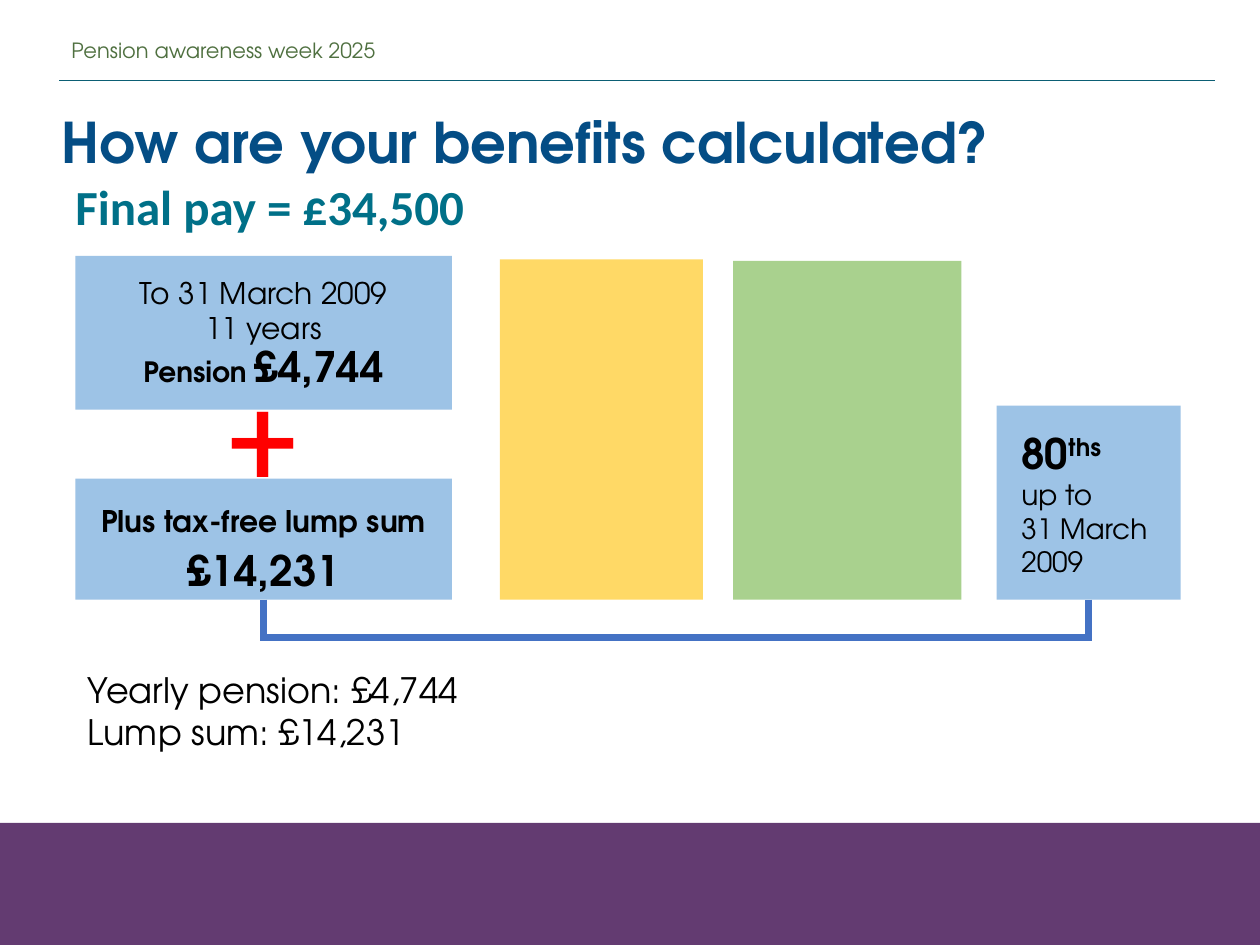
from lxml import etree
from pptx import Presentation
from pptx.dml.color import RGBColor
from pptx.enum.shapes import MSO_CONNECTOR, MSO_SHAPE
from pptx.enum.text import MSO_ANCHOR, PP_ALIGN
from pptx.oxml.ns import qn
from pptx.util import Cm, Pt

LINE, RECT = MSO_CONNECTOR.STRAIGHT, MSO_SHAPE.RECTANGLE
TOP, MID = MSO_ANCHOR.TOP, MSO_ANCHOR.MIDDLE
LEFT, CENTER = PP_ALIGN.LEFT, PP_ALIGN.CENTER

PURPLE = RGBColor(0x63, 0x3B, 0x71)
TEAL = RGBColor(0x0B, 0x5E, 0x74)
OLIVE = RGBColor(0x4F, 0x70, 0x40)
NAVY = RGBColor(0x04, 0x4D, 0x85)
CYAN = RGBColor(0x00, 0x70, 0x88)
SKY = RGBColor(0x9D, 0xC3, 0xE6)
YELLOW = RGBColor(0xFF, 0xD9, 0x66)
GREEN = RGBColor(0xA9, 0xD1, 0x8E)
BLUE = RGBColor(0x44, 0x72, 0xC4)
RED = RGBColor(0xFF, 0x00, 0x00)
BLACK = RGBColor(0x00, 0x00, 0x00)
FONT = "TeX Gyre Adventor"

WIDE, HIGH = 25.4, 19.05
EDGE, COL, BASE = 1.52, 7.59, 12.09
BAND, BAR, LAP = 16.59, 12.85, 0.07

HEAD = [[("Pension awareness week 2025", {})]]
TITLE = [[("How are your benefits calculated?", {})]]
PAY = [[("Final pay = £34,500", {})]]
PENSION = [
    [("To 31 March 2009", {})],
    [("11 years", {})],
    [("Pension ", {"size": 16, "bold": True}), ("£4,744", {"size": 24, "bold": True})],
]
PLUS = [[("+", {})]]
LUMP = [[("Plus tax-free lump sum", {})], [("£14,231", {"size": 24})]]
RATE = [
    [("80", {"size": 24, "bold": True}),
     ("ths", {"size": 24, "bold": True, "raised": True}),
     ("\n", {}), ("up to", {})],
    [("31 March 2009", {})],
]
TOTAL = [[("Yearly pension: £4,744", {})], [("Lump sum: £14,231", {})]]


def write(shape, paras, size=16, font=FONT, color=BLACK, bold=False, align=LEFT,
          anchor=TOP, pad=(0.25, 0.13, 0.25, 0.13), lead=None, gaps=()):
    frame = shape.text_frame
    frame.word_wrap = True
    frame.vertical_anchor = anchor
    (frame.margin_left, frame.margin_top,
     frame.margin_right, frame.margin_bottom) = map(Cm, pad)
    for i, parts in enumerate(paras):
        para = frame.paragraphs[0] if i == 0 else frame.add_paragraph()
        para.alignment = align
        para.line_spacing = lead
        if i and gaps:
            para.space_before = Pt(gaps[i - 1])
        for text, style in parts:
            if text == "\n":
                para.add_line_break()
                continue
            run = para.add_run()
            run.text = text
            run.font.name = font
            run.font.size = Pt(style.get("size", size))
            run.font.bold = style.get("bold", bold)
            run.font.color.rgb = color
            if style.get("raised"):
                run.font._element.set("baseline", "30000")


def box(x, y, w, h, fill):
    shape = slide.shapes.add_shape(RECT, Cm(x), Cm(y), Cm(w), Cm(h))
    shape.shadow.inherit = False
    shape.fill.solid()
    shape.fill.fore_color.rgb = fill
    shape.line.fill.background()
    return shape


def label(x, y, w, h, paras, **style):
    write(slide.shapes.add_textbox(Cm(x), Cm(y), Cm(w), Cm(h)), paras, **style)


def rule(x1, y1, x2, y2, color, width):
    line = slide.shapes.add_connector(LINE, Cm(x1), Cm(y1), Cm(x2), Cm(y2))
    line.line.color.rgb = color
    line.line.width = Pt(width)
    etree.SubElement(line._element.spPr, qn("a:effectLst"))
    return line


deck = Presentation()
deck.slide_width, deck.slide_height = Cm(WIDE), Cm(HIGH)
slide = deck.slides.add_slide(deck.slide_layouts[6])

box(0, BAND, WIDE, HIGH - BAND, PURPLE)
rule(1.19, 1.63, 24.49, 1.63, TEAL, 0.5)
label(1.19, 0.69, 16.54, 0.64, HEAD, size=12, color=OLIVE, lead=0.9)
label(0.99, 2.03, 23.7, 1.63, TITLE, size=32, color=NAVY, bold=True)
label(EDGE, 3.56, 17.09, 1.19, PAY, size=28, font="Calibri", color=CYAN,
      bold=True, pad=(0, 0, 0, 0))

write(box(EDGE, 5.16, COL, 3.1, SKY), PENSION, size=17, align=CENTER,
      anchor=MID, pad=(0, 0, 0, 0), lead=Pt(20), gaps=(0, 6))
label(EDGE, 8.15, COL, 1.27, PLUS, size=72, font="Roboto", color=RED,
      align=CENTER, anchor=MID)
lump = box(EDGE, 9.65, COL, BASE - 9.65, SKY)
write(lump, LUMP, size=17, bold=True, align=CENTER, pad=(0, 0.5, 0, 0),
      lead=Pt(20), gaps=(12,))

for x, y, w, fill in [(10.08, 5.23, 4.09, YELLOW), (14.78, 5.26, 4.6, GREEN)]:
    box(x, y, w, BASE - y, fill)
rate = box(20.09, 8.18, 3.71, BASE - 8.18, SKY)
write(rate, RATE, anchor=MID, pad=(0.5, 0.5, 0.5, 0.5))

ends = [(shape.left + shape.width / 2) / Cm(1) for shape in (lump, rate)]
for shape, x in zip((lump, rate), ends):
    rule(x, BASE, x, BAR + LAP, BLUE, 4).begin_connect(shape, 2)
rule(ends[0] - LAP, BAR, ends[1] + LAP, BAR, BLUE, 4)

label(EDGE, 13.34, 17.35, 1.96, TOTAL, size=20)

deck.save("out.pptx")
